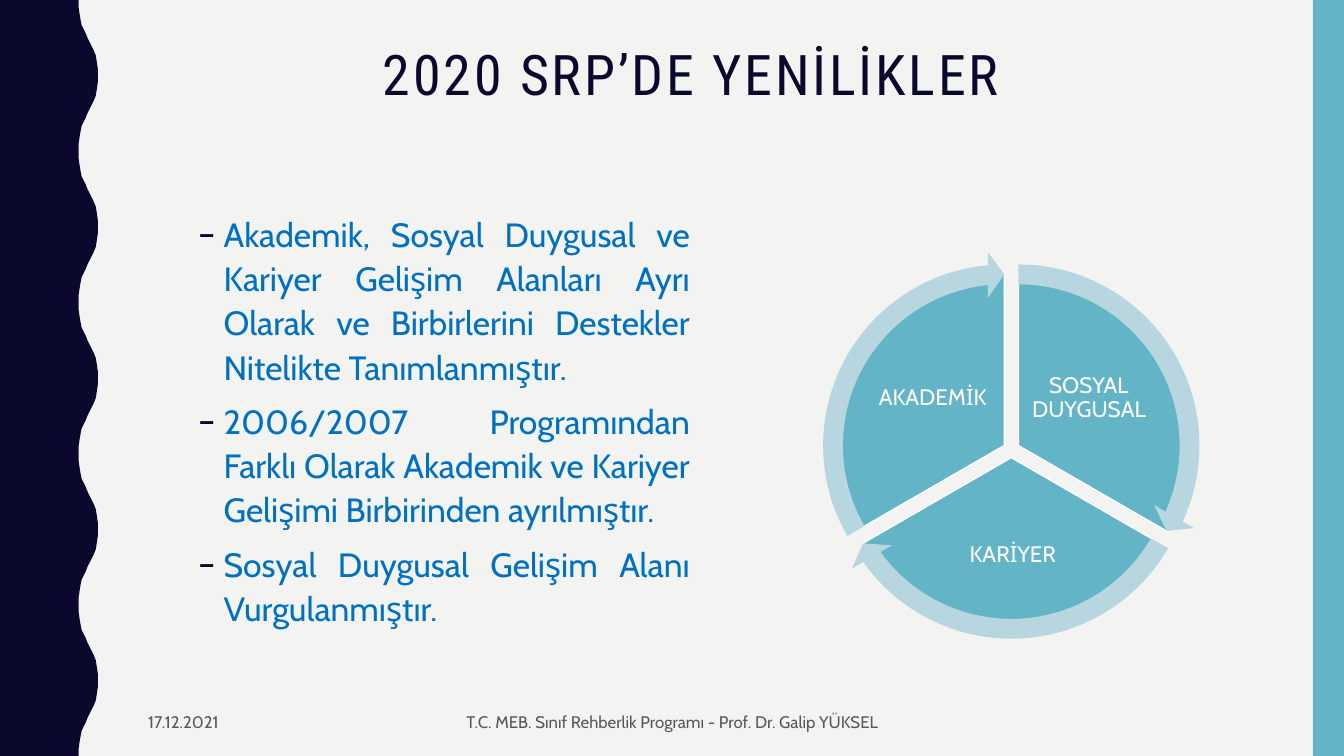
from dataclasses import dataclass

from lxml.etree import SubElement
from pptx import Presentation
from pptx.dml.color import RGBColor
from pptx.enum.shapes import MSO_SHAPE
from pptx.enum.text import MSO_ANCHOR, PP_ALIGN
from pptx.oxml.ns import qn
from pptx.util import Inches, Pt


@dataclass(frozen=True)
class Theme:
    paper: str = "F3F3F2"
    navy: str = "0B082E"
    teal: str = "62B4C6"
    pale_teal: str = "B7D6DF"
    blue: str = "0070C0"
    gray: str = "595959"
    white: str = "FFFFFF"
    heading_font: str = "Roboto Condensed"
    body_font: str = "Cabin"
    title_size: int = 40
    body_size: int = 24
    label_size: int = 16
    footer_size: int = 12


THEME = Theme()
WIDTH, HEIGHT = 13.33, 7.5

# Half a wave of the left edge, as (x, y) from trough to crest
WAVE_PERIOD = 1.5
HALF_WAVE = [
    (0.78, 0), (0.78, 0.07), (0.79, 0.14), (0.8, 0.2), (0.81, 0.25),
    (0.83, 0.29), (0.85, 0.33), (0.87, 0.38), (0.89, 0.42), (0.91, 0.46),
    (0.93, 0.5), (0.95, 0.55), (0.96, 0.61), (0.97, 0.68), (0.97, 0.75),
]

POINTS = [
    "Akademik, Sosyal Duygusal ve Kariyer Gelişim Alanları Ayrı Olarak ve "
    "Birbirlerini Destekler Nitelikte Tanımlanmıştır. ",
    "2006/2007 Programından Farklı Olarak Akademik ve Kariyer Gelişimi "
    "Birbirinden ayrılmıştır. ",
    "Sosyal Duygusal Gelişim Alanı Vurgulanmıştır. ",
]

# Cycle: label, label box, pie corner, pie angles, arrow angles
PIE_SIZE, ARROW_SIZE = 3.42, 3.85
SECTORS = [
    ("SOSYAL DUYGUSAL", (10.19, 3.44, 1.22, 1.02), (8.39, 2.71), (162, 18), (14.725, 161.994)),
    ("KARİYER", (9.13, 5.06, 1.83, 0.9), (8.32, 2.83), (18, 90), (86.72, 18.005)),
    ("AKADEMİK", (8.64, 3.44, 1.22, 1.02), (8.25, 2.71), (90, 162), (158.73, 90)),
]


def paint(shape, fill, line=None):
    shape.shadow.inherit = False
    shape.fill.solid()
    shape.fill.fore_color.rgb = RGBColor.from_string(fill)
    if line:
        shape.line.color.rgb = RGBColor.from_string(line)
        shape.line.width = Pt(1)
    else:
        shape.line.fill.background()


def add_preset(page, kind, area, fill, line=None, adjustments=()):
    shape = page.shapes.add_shape(kind, *map(Inches, area))
    paint(shape, fill, line)
    for index, value in enumerate(adjustments):
        shape.adjustments[index] = value
    return shape


def add_dash(para, color):
    properties = para._p.get_or_add_pPr()
    properties.set("marL", str(Inches(0.75)))
    properties.set("indent", str(Inches(-0.25)))
    bullet_color = SubElement(properties, qn("a:buClr"))
    SubElement(bullet_color, qn("a:srgbClr"), val=color)
    SubElement(properties, qn("a:buFont"), typeface=THEME.body_font)
    SubElement(properties, qn("a:buChar"), char="–")


def add_text(page, area, paragraphs, *, size, color, font=THEME.body_font,
             align=PP_ALIGN.LEFT, anchor=MSO_ANCHOR.MIDDLE, line_spacing=1.0,
             space_before=0, tracking=0, inset=None, dash=None):
    box = page.shapes.add_textbox(*map(Inches, area))
    frame = box.text_frame
    frame.word_wrap = True
    frame.vertical_anchor = anchor
    if inset is not None:
        frame.margin_left = frame.margin_right = Inches(inset)
        frame.margin_top = frame.margin_bottom = Inches(inset)
    for index, text in enumerate(paragraphs):
        para = frame.add_paragraph() if index else frame.paragraphs[0]
        para.alignment = align
        para.line_spacing = line_spacing
        para.space_before = Pt(space_before)
        if dash:
            add_dash(para, dash)
        span = para.add_run()
        span.text = text
        span.font.name = font
        span.font.size = Pt(size)
        span.font.color.rgb = RGBColor.from_string(color)
        if tracking:
            span.font._element.set("spc", str(tracking * 100))
    return box


def add_wavy_edge(page):
    wave = HALF_WAVE + [(x, WAVE_PERIOD - y) for x, y in reversed(HALF_WAVE[1:-1])]
    count = round(HEIGHT / WAVE_PERIOD)
    edge = [(x, y + turn * WAVE_PERIOD) for turn in range(count) for x, y in wave]
    edge += [(HALF_WAVE[0][0], HEIGHT), (0, HEIGHT)]
    builder = page.shapes.build_freeform(0, 0)
    builder.add_line_segments([(Inches(x), Inches(y)) for x, y in edge], close=True)
    paint(builder.convert_to_shape(), THEME.navy)


def add_cycle(page):
    for label, label_area, corner, angles, _ in SECTORS:
        add_preset(page, MSO_SHAPE.PIE, (*corner, PIE_SIZE, PIE_SIZE),
                   THEME.teal, THEME.white, angles)
        add_text(page, label_area, [label], size=THEME.label_size, color=THEME.white,
                 align=PP_ALIGN.CENTER, line_spacing=0.9, inset=0.02)
    # Arrows share the centres of their pies
    overhang = (ARROW_SIZE - PIE_SIZE) / 2
    for _, _, (left, top), _, (end, start) in SECTORS:
        add_preset(page, MSO_SHAPE.CIRCULAR_ARROW,
                   (left - overhang, top - overhang, ARROW_SIZE, ARROW_SIZE),
                   THEME.pale_teal, adjustments=(0.051, 3.275, end, start, 0.059))


def main():
    deck = Presentation()
    deck.slide_width, deck.slide_height = Inches(WIDTH), Inches(HEIGHT)
    page = deck.slides.add_slide(deck.slide_layouts[6])

    # Background and side bands
    page.background.fill.solid()
    page.background.fill.fore_color.rgb = RGBColor.from_string(THEME.paper)
    add_wavy_edge(page)
    add_preset(page, MSO_SHAPE.RECTANGLE, (13.02, 0, 0.31, HEIGHT), THEME.teal)

    # Title and points
    add_text(page, (1.37, 0.42, 11.13, 1.36), ["2020 SRP’DE YENİLİKLER "],
             size=THEME.title_size, color=THEME.navy, font=THEME.heading_font,
             align=PP_ALIGN.CENTER, anchor=MSO_ANCHOR.TOP, line_spacing=0.9, tracking=2)
    add_text(page, (1.37, 2.03, 5.57, 4.4), POINTS, size=THEME.body_size,
             color=THEME.blue, align=PP_ALIGN.JUSTIFY, anchor=MSO_ANCHOR.TOP,
             line_spacing=1.1, space_before=7, dash=THEME.navy)

    # Footer
    add_text(page, (1.37, 6.97, 2.55, 0.38), ["17.12.2021"],
             size=THEME.footer_size, color=THEME.gray)
    add_text(page, (4.42, 6.97, 4.5, 0.38),
             ["T.C. MEB. Sınıf Rehberlik Programı - Prof. Dr. Galip YÜKSEL"],
             size=THEME.footer_size, color=THEME.gray, align=PP_ALIGN.CENTER)

    # Diagram
    add_cycle(page)
    deck.save("out.pptx")


if __name__ == "__main__":
    main()
